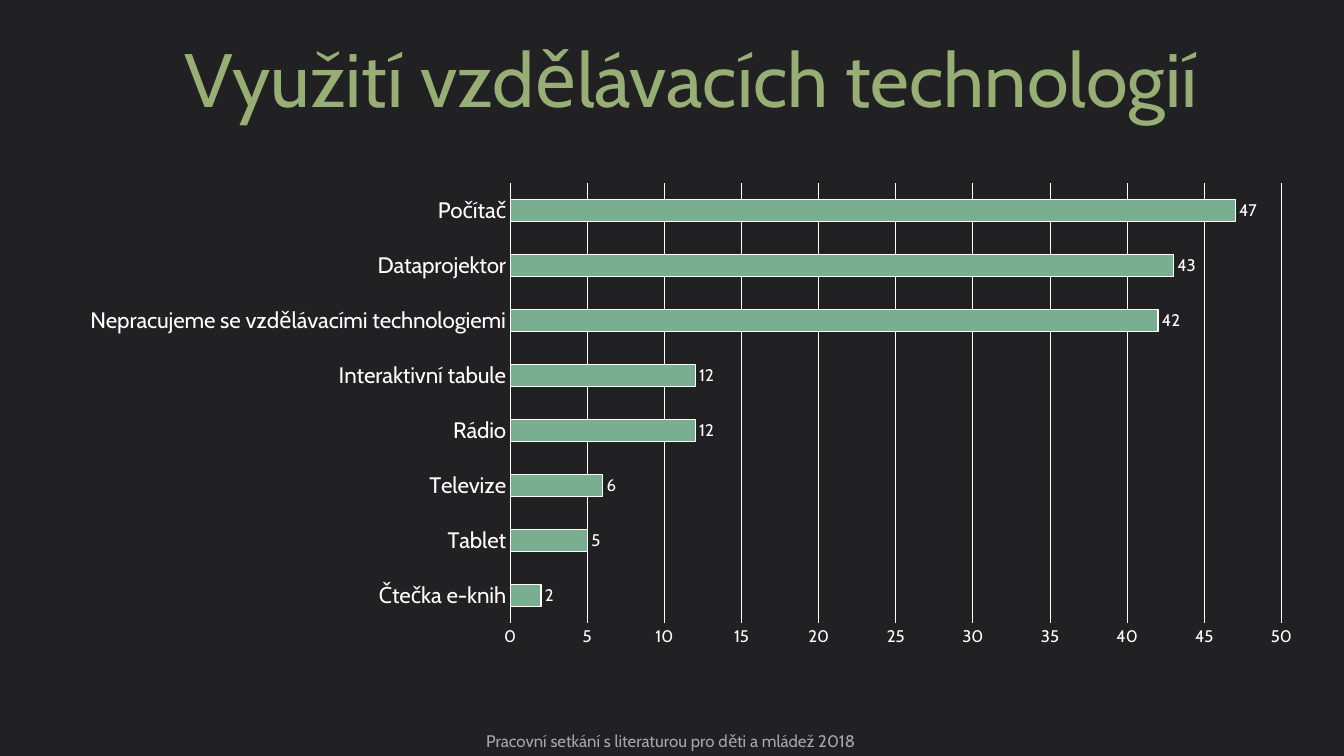
from lxml import etree
from pptx import Presentation
from pptx.chart.data import CategoryChartData
from pptx.dml.color import RGBColor
from pptx.enum.chart import XL_CHART_TYPE as CT, XL_LABEL_POSITION as LP, XL_TICK_MARK as TM
from pptx.enum.text import MSO_ANCHOR as MA, PP_ALIGN as PA
from pptx.oxml import parse_xml
from pptx.oxml.ns import nsdecls, qn
from pptx.util import Inches, Pt

FONT = "Cabin"
WHITE = "FFFFFF"
TECHNOLOGIES = {
    "Čtečka e-knih": 2,
    "Tablet": 5,
    "Televize": 6,
    "Rádio": 12,
    "Interaktivní tabule": 12,
    "Nepracujeme se vzdělávacími technologiemi": 42,
    "Dataprojektor": 43,
    "Počítač": 47,
}


def rgb(value):
    return RGBColor.from_string(value)


def style_font(font, size, color):
    font.name = FONT
    font.size = Pt(size)
    font.color.rgb = rgb(color)


def style_line(line, color=WHITE, width=0.75):
    line.color.rgb = rgb(color)
    line.width = Pt(width)


def add_shadow(r):
    fill = r._r.get_or_add_rPr().find(qn("a:solidFill"))
    fill.addnext(parse_xml(
        f'<a:effectLst {nsdecls("a")}>'
        '<a:outerShdw blurRad="38100" dist="38100" dir="2700000" algn="tl">'
        '<a:srgbClr val="000000"><a:alpha val="60000"/></a:srgbClr>'
        '</a:outerShdw></a:effectLst>'))


def add_text(s, text, box, size=12, color=WHITE, anchor=MA.MIDDLE, shadow=False):
    tf = s.shapes.add_textbox(*map(Inches, box)).text_frame
    tf.word_wrap = True
    tf.vertical_anchor = anchor
    p = tf.paragraphs[0]
    p.alignment = PA.CENTER
    r = p.add_run()
    r.text = text
    style_font(r.font, size, color)
    if shadow:
        add_shadow(r)


def set_plot_area(chart, **fractions):
    plot_area = chart._chartSpace.chart.plotArea
    for old in plot_area.findall(qn("c:layout")):
        plot_area.remove(old)
    layout = etree.Element(qn("c:layout"))
    manual = etree.SubElement(layout, qn("c:manualLayout"))
    settings = dict(layoutTarget="inner", xMode="edge", yMode="edge", **fractions)
    for name, value in settings.items():
        etree.SubElement(manual, qn(f"c:{name}")).set("val", str(value))
    plot_area.insert(0, layout)


def add_usage_chart(s, box):
    data = CategoryChartData()
    data.categories = list(TECHNOLOGIES)
    data.add_series("Series 1", list(TECHNOLOGIES.values()))
    chart = s.shapes.add_chart(CT.BAR_CLUSTERED, *map(Inches, box), data).chart
    chart.has_legend = False
    chart.has_title = False
    style_font(chart.font, 10, WHITE)

    left, top, width, height = box
    set_plot_area(chart, x=(5.06 - left) / width, y=(1.82 - top) / height,
                  w=7.65 / width, h=4.36 / height)

    for axis, size in ((chart.category_axis, 16), (chart.value_axis, 12)):
        axis.major_tick_mark = axis.minor_tick_mark = TM.NONE
        style_font(axis.tick_labels.font, size, WHITE)
    style_line(chart.category_axis.format.line)
    chart.category_axis.has_major_gridlines = False

    values = chart.value_axis
    values.minimum_scale, values.maximum_scale, values.major_unit = 0, 50, 5
    values.format.line.fill.background()
    values.has_major_gridlines = True
    style_line(values.major_gridlines.format.line)

    plot = chart.plots[0]
    plot.gap_width = 150
    plot.vary_by_categories = False
    bars = plot.series[0]
    bars.format.fill.solid()
    bars.format.fill.fore_color.rgb = rgb("79AE90")
    style_line(bars.format.line)
    labels = bars.data_labels
    labels.show_value = True
    labels.position = LP.OUTSIDE_END
    style_font(labels.font, 12, WHITE)


def build_chart_slide(prs):
    s = prs.slides.add_slide(prs.slide_layouts[6])
    s.background.fill.solid()
    s.background.fill.fore_color.rgb = rgb("212123")
    add_text(s, "Využití vzdělávacích technologií", (1.33, 0.24, 11.05, 1.05),
             size=54, color="97AF75", shadow=True)
    add_usage_chart(s, (0.65, 1.72, 12.41, 4.79))
    add_text(s, "Pracovní setkání s literaturou pro děti a mládež 2018",
             (-0.01, 7.1, 13.33, 0.4), color="A6A6A6", anchor=MA.BOTTOM)


def main():
    prs = Presentation()
    prs.slide_width, prs.slide_height = Inches(13.33), Inches(7.5)
    build_chart_slide(prs)
    prs.save("out.pptx")


if __name__ == "__main__":
    main()
